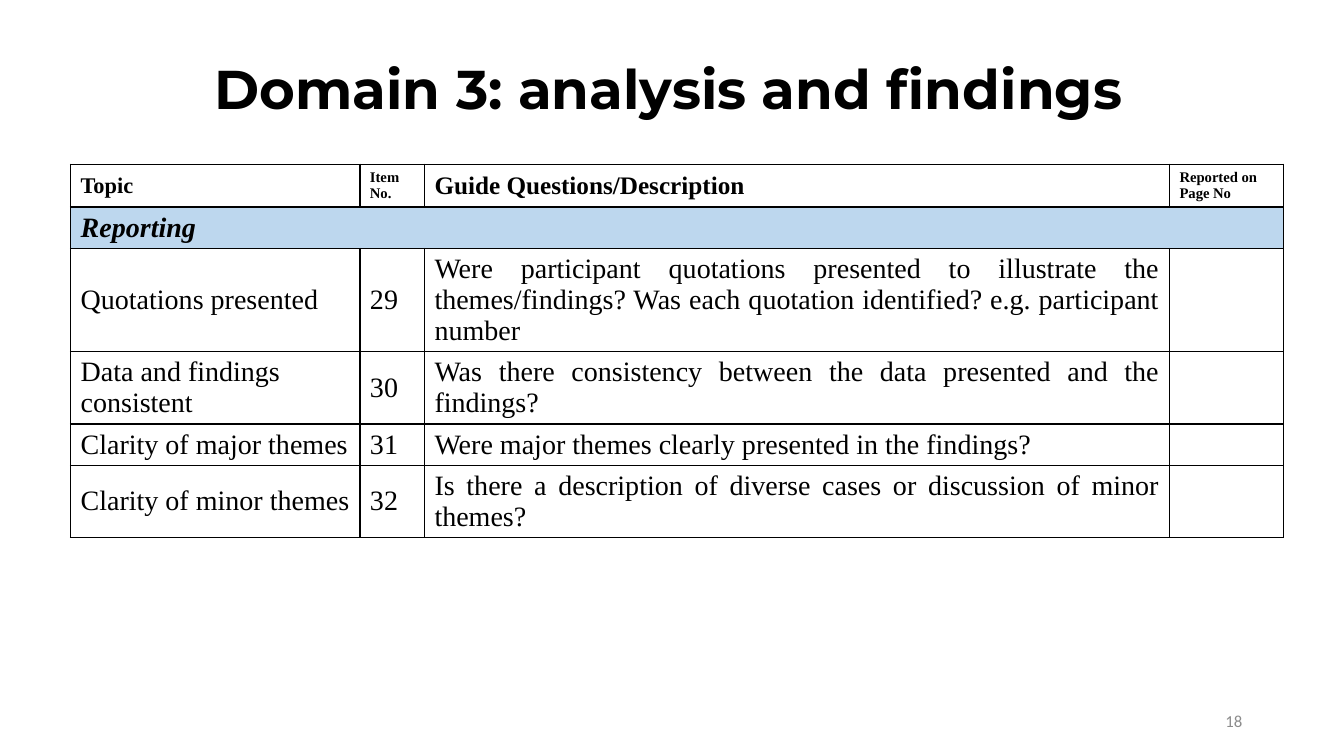
from lxml import etree
from pptx import Presentation
from pptx.dml.color import RGBColor
from pptx.enum.text import MSO_ANCHOR, MSO_AUTO_SIZE, PP_ALIGN
from pptx.oxml.ns import qn
from pptx.util import Inches, Pt

LEFT, CENTER, RIGHT, JUSTIFY = (
    PP_ALIGN.LEFT, PP_ALIGN.CENTER, PP_ALIGN.RIGHT, PP_ALIGN.JUSTIFY)
MIDDLE = MSO_ANCHOR.MIDDLE
NO_AUTOFIT = MSO_AUTO_SIZE.NONE

# Content
TITLE = "Domain 3: analysis and findings"
PAGE_NUMBER = "18"
HEADINGS = [("Topic", 16), ("Item No.", 10.5),
            ("Guide Questions/Description", 18), ("Reported on Page No", 10.5)]
SECTION = "Reporting"
ITEMS = [
    ("Quotations presented", "29",
     "Were participant quotations presented to illustrate the themes/findings? "
     "Was each quotation identified? e.g. participant number"),
    ("Data and findings consistent", "30",
     "Was there consistency between the data presented and the findings?"),
    ("Clarity of major themes", "31",
     "Were major themes clearly presented in the findings?"),
    ("Clarity of minor themes", "32",
     "Is there a description of diverse cases or discussion of minor themes?"),
]
COLUMN_WIDTHS = [2.87, 0.64, 7.39, 1.13]
ROW_HEIGHT = 0.41
BLACK, GRAY, LIGHT_BLUE = "000000", "8C8C8C", "BDD7EE"


def color(value):
    return RGBColor.from_string(value)


def write(frame, text, size, font="Times New Roman", fill=BLACK, bold=False,
          italic=False, align=LEFT, spacing=None):
    para = frame.paragraphs[0]
    para.alignment = align
    para.line_spacing = spacing
    span = para.add_run()
    span.text = text
    span.font.size = Pt(size)
    span.font.name = font
    span.font.bold = bold
    span.font.italic = italic
    span.font.color.rgb = color(fill)


def add_borders(cell):
    properties = cell._tc.get_or_add_tcPr()
    for side in ("a:lnL", "a:lnR", "a:lnT", "a:lnB"):
        line = etree.SubElement(properties, qn(side), w=str(Pt(1)))
        solid = etree.SubElement(line, qn("a:solidFill"))
        etree.SubElement(solid, qn("a:srgbClr"), val=BLACK)


def place(shape, left, top, width, height):
    shape.left, shape.top = Inches(left), Inches(top)
    shape.width, shape.height = Inches(width), Inches(height)


deck = Presentation()
deck.slide_width, deck.slide_height = Inches(13.33), Inches(7.5)
page = deck.slides.add_slide(deck.slide_layouts[5])

# Title
title = page.shapes.title
place(title, -0.44, 0.19, 14.14, 1.45)
title.text_frame.auto_size = NO_AUTOFIT
title.text_frame.vertical_anchor = MIDDLE
write(title.text_frame, TITLE, 39, font="Montserrat", bold=True,
      align=CENTER, spacing=0.9)

# Table grid
row_count = len(ITEMS) + 2
table = page.shapes.add_table(
    row_count, len(COLUMN_WIDTHS), Inches(0.7), Inches(1.63),
    Inches(sum(COLUMN_WIDTHS)), Inches(ROW_HEIGHT * row_count)).table
table.first_row = table.horz_banding = False
for column, width in zip(table.columns, COLUMN_WIDTHS):
    column.width = Inches(width)
for row in table.rows:
    row.height = Inches(ROW_HEIGHT)
for cell in table.iter_cells():
    cell.vertical_anchor = MIDDLE
    add_borders(cell)
    cell.fill.background()

# Table headings and section band
for index, (text, size) in enumerate(HEADINGS):
    write(table.cell(0, index).text_frame, text, size, bold=True)
band = table.cell(1, 0)
band.merge(table.cell(1, len(COLUMN_WIDTHS) - 1))
band.fill.solid()
band.fill.fore_color.rgb = color(LIGHT_BLUE)
write(band.text_frame, SECTION, 20, bold=True, italic=True)

# Checklist items
for row_index, item in enumerate(ITEMS, start=2):
    for index, (text, align) in enumerate(zip(item, (LEFT, LEFT, JUSTIFY))):
        write(table.cell(row_index, index).text_frame, text, 20, align=align)

# Page number
box = page.shapes.add_textbox(Inches(9.42), Inches(6.95), Inches(3), Inches(0.4))
box.text_frame.word_wrap = True
box.text_frame.vertical_anchor = MIDDLE
write(box.text_frame, PAGE_NUMBER, 12, font="Calibri", fill=GRAY, align=RIGHT)

deck.save("out.pptx")
